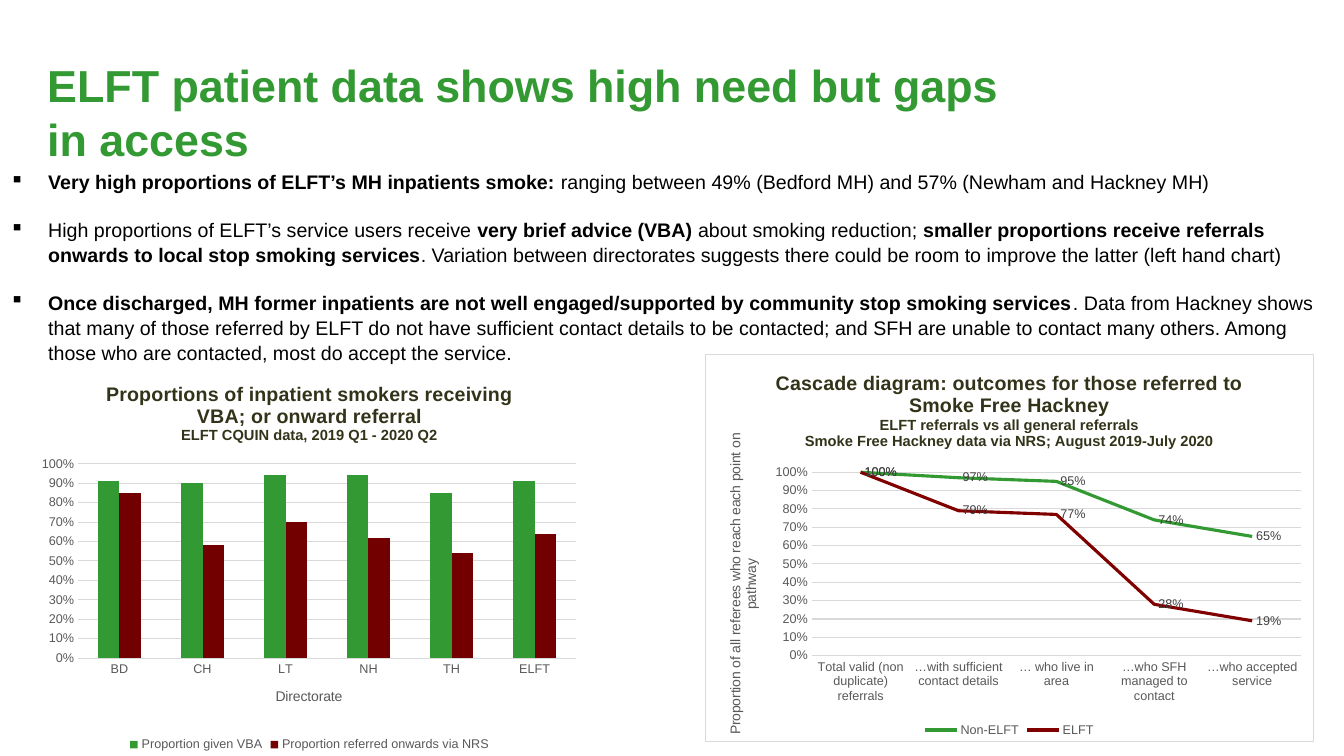
from dataclasses import dataclass

import pptx
import pptx.chart.data
import pptx.dml.color
import pptx.enum.chart
import pptx.enum.text
import pptx.oxml
import pptx.oxml.ns
import pptx.util
from pptx.util import Inches


@dataclass(frozen=True)
class Theme:
    font: str = "Arial"
    green: str = "339933"
    bar_red: str = "730000"
    line_red: str = "800000"
    black: str = "000000"
    heading: str = "33331A"
    axis: str = "595959"
    label: str = "404040"
    grid: str = "D9D9D9"
    headline_size: float = 32
    body_size: float = 14
    chart_sub_size: float = 10.5
    axis_title_size: float = 10
    tick_size: float = 9


theme = Theme()
rgb = pptx.dml.color.RGBColor.from_string
qn = pptx.oxml.ns.qn
ns = pptx.oxml.ns.nsdecls("c", "a")
kinds = pptx.enum.chart.XL_CHART_TYPE


def write(paragraph, text, size=theme.body_size, color=theme.black, bold=False):
    run = paragraph.add_run()
    run.text = text
    run.font.name = theme.font
    run.font.size = pptx.util.Pt(size)
    run.font.bold = bold
    run.font.color.rgb = rgb(color)


def style_font(font, color):
    font.name = theme.font
    font.size = pptx.util.Pt(theme.tick_size)
    font.bold = False
    font.color.rgb = rgb(color)


deck = pptx.Presentation()
deck.slide_width, deck.slide_height = Inches(13.33), Inches(7.5)
slide = deck.slides.add_slide(deck.slide_layouts[6])

# Headline
headline = slide.shapes.add_textbox(Inches(0.37), Inches(0.6), Inches(10), Inches(1.02)).text_frame
headline.word_wrap = True
headline.vertical_anchor = pptx.enum.text.MSO_ANCHOR.MIDDLE
write(headline.paragraphs[0], "ELFT patient data shows high need but gaps in access",
      size=theme.headline_size, color=theme.green, bold=True)

# Findings: each is a list of (text, bold)
findings = [
    [("Very high proportions of ELFT’s MH inpatients smoke: ", True),
     ("ranging between 49% (Bedford MH) and 57% (Newham and Hackney MH)", False)],
    [("High proportions of ELFT’s service users receive ", False),
     ("very brief advice (VBA) ", True),
     ("about smoking reduction; ", False),
     ("smaller proportions receive referrals onwards to local stop smoking services", True),
     (". Variation between directorates suggests there could be room to improve the latter "
      "(left hand chart)", False)],
    [("Once discharged, MH former inpatients are not well engaged/supported by community "
      "stop smoking services", True),
     (". Data from Hackney shows that many of those referred by ELFT do not have sufficient "
      "contact details to be contacted; and SFH are unable to contact many others. Among those "
      "who are contacted, most do accept the service.", False)],
]
body = slide.shapes.add_textbox(0, Inches(1.62), Inches(13.33), Inches(2.03)).text_frame
body.word_wrap = True
for number, finding in enumerate(findings):
    paragraph = body.paragraphs[0] if number == 0 else body.add_paragraph()
    properties = paragraph._p.get_or_add_pPr()
    properties.set("marL", str(Inches(0.38)))
    properties.set("indent", str(-Inches(0.38)))
    properties.append(pptx.oxml.parse_xml(f'<a:buChar {ns} char="▪"/>'))
    paragraph.line_spacing = 1.06
    paragraph.space_before = pptx.util.Pt(16.5 if number else 0)
    for text, bold in finding:
        write(paragraph, text, bold=bold)

# Charts: place and plot are left, top, width, height (plot as shares of the chart)
charts = [
    dict(kind=kinds.COLUMN_CLUSTERED, place=(0.31, 3.62, 5.52, 3.88),
         plot=(0.084, 0.253, 0.895, 0.497), border=False,
         title=["Proportions of inpatient smokers receiving VBA; or onward referral",
                "ELFT CQUIN data, 2019 Q1 - 2020 Q2"],
         category_title="Directorate", value_title=None,
         categories=["BD", "CH", "LT", "NH", "TH", "ELFT"],
         series=[("Proportion given VBA", theme.green, [0.91, 0.9, 0.94, 0.94, 0.85, 0.91]),
                 ("Proportion referred onwards via NRS", theme.bar_red,
                  [0.85, 0.58, 0.7, 0.62, 0.54, 0.64])]),
    dict(kind=kinds.LINE, place=(6.99, 3.51, 6.04, 3.85),
         plot=(0.175, 0.305, 0.805, 0.474), border=True,
         title=["Cascade diagram: outcomes for those referred to Smoke Free Hackney",
                "ELFT referrals vs all general referrals",
                "Smoke Free Hackney data via NRS; August 2019-July 2020"],
         category_title=None,
         value_title="Proportion of all referees who reach each point on pathway",
         categories=["Total valid (non duplicate) referrals", "…with sufficient contact details",
                     "… who live in area", "…who SFH managed to contact",
                     "…who accepted service"],
         series=[("Non-ELFT", theme.green, [1, 0.97, 0.95, 0.74, 0.65]),
                 ("ELFT", theme.line_red, [1, 0.79, 0.77, 0.28, 0.19])]),
]
for entry in charts:
    figures = pptx.chart.data.CategoryChartData(number_format="0%")
    figures.categories = entry["categories"]
    for name, color, values in entry["series"]:
        figures.add_series(name, values)
    chart = slide.shapes.add_chart(entry["kind"], *map(Inches, entry["place"]), figures).chart
    style_font(chart.font, theme.axis)

    # Frame and plot area
    line = f'<a:solidFill><a:srgbClr val="{theme.grid}"/></a:solidFill>' if entry["border"] else "<a:noFill/>"
    chart.element.find(qn("c:txPr")).addprevious(pptx.oxml.parse_xml(
        f'<c:spPr {ns}><a:noFill/><a:ln w="9525">{line}</a:ln></c:spPr>'))
    plot_area = chart.element.find(f".//{qn('c:plotArea')}")
    for automatic in plot_area.findall(qn("c:layout")):
        plot_area.remove(automatic)
    x, y, w, h = entry["plot"]
    plot_area.insert(0, pptx.oxml.parse_xml(
        f'<c:layout {ns}><c:manualLayout><c:layoutTarget val="inner"/>'
        f'<c:xMode val="edge"/><c:yMode val="edge"/><c:x val="{x}"/><c:y val="{y}"/>'
        f'<c:w val="{w}"/><c:h val="{h}"/></c:manualLayout></c:layout>'))

    # Title and legend
    title = chart.chart_title.text_frame
    for number, text in enumerate(entry["title"]):
        write(title.paragraphs[0] if number == 0 else title.add_paragraph(), text,
              size=theme.chart_sub_size if number else theme.body_size,
              color=theme.heading, bold=True)
    chart.chart_title.include_in_layout = False
    chart.has_legend = True
    chart.legend.position = pptx.enum.chart.XL_LEGEND_POSITION.BOTTOM
    chart.legend.include_in_layout = False
    style_font(chart.legend.font, theme.axis)

    # Axes
    for axis, text in ((chart.category_axis, entry["category_title"]),
                       (chart.value_axis, entry["value_title"])):
        axis.major_tick_mark = axis.minor_tick_mark = pptx.enum.chart.XL_TICK_MARK.NONE
        style_font(axis.tick_labels.font, theme.axis)
        axis.has_title = text is not None
        if text:
            write(axis.axis_title.text_frame.paragraphs[0], text,
                  size=theme.axis_title_size, color=theme.axis)
    if entry["value_title"]:
        chart.value_axis.axis_title.text_frame._txBody.bodyPr.set("rot", "-5400000")
    chart.category_axis.format.line.color.rgb = rgb(theme.grid)
    chart.category_axis.format.line.width = pptx.util.Pt(0.75)
    values_axis = chart.value_axis
    values_axis.minimum_scale, values_axis.maximum_scale, values_axis.major_unit = 0, 1, 0.1
    values_axis.tick_labels.number_format = "0%"
    values_axis.tick_labels.number_format_is_linked = False
    values_axis.format.line.fill.background()
    values_axis.major_gridlines.format.line.color.rgb = rgb(theme.grid)
    values_axis.major_gridlines.format.line.width = pptx.util.Pt(0.75)

    # Series
    plot = chart.plots[0]
    plot.vary_by_categories = False
    if entry["kind"] == kinds.COLUMN_CLUSTERED:
        plot.gap_width, plot.overlap = 91 * 2, 0
    for series, (name, color, values) in zip(plot.series, entry["series"]):
        if entry["kind"] == kinds.COLUMN_CLUSTERED:
            series.format.fill.solid()
            series.format.fill.fore_color.rgb = rgb(color)
            continue
        series.smooth = False
        series.marker.style = pptx.enum.chart.XL_MARKER_STYLE.NONE
        series.format.line.color.rgb = rgb(color)
        series.format.line.width = pptx.util.Pt(2.25)
        labels = series.data_labels
        labels.show_value = True
        labels.number_format, labels.number_format_is_linked = "0%", False
        labels.position = pptx.enum.chart.XL_LABEL_POSITION.RIGHT
        style_font(labels.font, theme.label)

deck.save("out.pptx")
